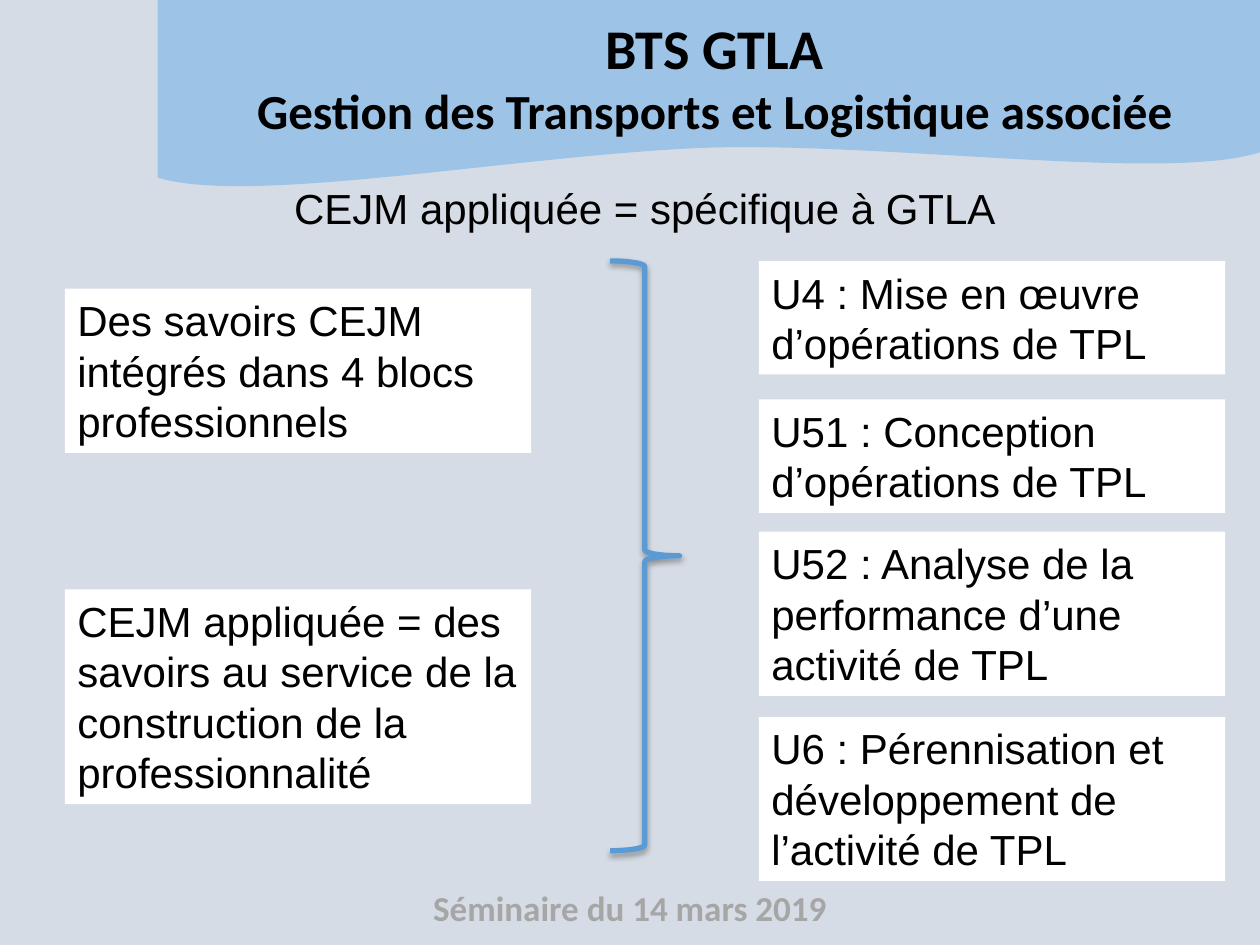
from lxml.etree import fromstring
from pptx import Presentation
from pptx.dml.color import RGBColor
from pptx.enum.shapes import MSO_SHAPE
from pptx.enum.text import MSO_ANCHOR, MSO_AUTO_SIZE, PP_ALIGN
from pptx.util import Cm, Pt

SHADOW = """<a:effectLst xmlns:a="http://schemas.openxmlformats.org/drawingml/2006/main">
<a:outerShdw blurRad="40000" dist="23000" dir="5400000" rotWithShape="0">
<a:srgbClr val="000000"><a:alpha val="35000"/></a:srgbClr>
</a:outerShdw></a:effectLst>"""


def paint(target, color):
    target.solid()
    target.fore_color.rgb = RGBColor.from_string(color)


def place(shape, box):
    shape.left, shape.top, shape.width, shape.height = map(Cm, box)


def write(shape, text, sizes, font="Arial", color="000000", bold=False,
          align=PP_ALIGN.LEFT, pitch=None):
    frame = shape.text_frame
    frame.text = text
    frame.word_wrap = True
    frame.auto_size = MSO_AUTO_SIZE.SHAPE_TO_FIT_TEXT
    frame.vertical_anchor = MSO_ANCHOR.TOP
    for para, size in zip(frame.paragraphs, sizes):
        para.alignment = align
        if pitch:
            para.line_spacing = Pt(pitch)
        for run in para.runs:
            run.font.name = font
            run.font.size = Pt(size)
            run.font.bold = bold
            paint(run.font.fill, color)


def label(slide, box, text, sizes, color="000000"):
    shape = slide.shapes.add_textbox(*map(Cm, box))
    write(shape, text, sizes, "Calibri", color, True, PP_ALIGN.CENTER)


def curve(start, first, second, end, steps=30):
    for i in range(1, steps + 1):
        t = i / steps
        u = 1 - t
        yield tuple(u**3 * a + 3 * u * u * t * b + 3 * u * t * t * c + t**3 * d
                    for a, b, c, d in zip(start, first, second, end))


def banner(slide, box):
    left, top, width, height = box
    right, mid, end = (width, 3.07), (11.3, 2.97), (0, 3.58)
    points = [(width, 0), right,
              *curve(right, (20.42, 3.66), (15.01, 2.9), mid),
              *curve(mid, (7.59, 3.07), (1.87, height), end)]
    pen = slide.shapes.build_freeform(Cm(left), Cm(top))
    pen.add_line_segments([(Cm(left + x), Cm(top + y)) for x, y in points])
    wave = pen.convert_to_shape()
    wave.shadow.inherit = False
    paint(wave.fill, "9DC3E6")
    wave.line.fill.background()
    label(slide, (left + 1.6, top + 0.15, 19.25, 2.82),
          "BTS GTLA\nGestion des Transports et Logistique associée", (32, 28))


def heading(slide, box):
    title = slide.shapes.title
    place(title, box)
    write(title, "CEJM appliquée = spécifique à GTLA", [24],
          align=PP_ALIGN.CENTER, pitch=28.8)


def column(slide, box, cards):
    left, top, width = box
    for drop, lines, text in cards:
        height = 0.25 + 1.02 * lines
        card = slide.shapes.add_shape(
            MSO_SHAPE.RECTANGLE, *map(Cm, (left, top + drop, width, height)))
        card.shadow.inherit = False
        paint(card.fill, "FFFFFF")
        card.line.fill.background()
        write(card, text, [24], pitch=28.8)


def brace(slide, box):
    shape = slide.shapes.add_shape(MSO_SHAPE.RIGHT_BRACE, *map(Cm, box))
    shape.fill.background()
    paint(shape.line.fill, "5B9BD5")
    shape.line.width = Pt(3)
    shape._element.spPr.append(fromstring(SHADOW))


def main():
    deck = Presentation()
    deck.slide_width, deck.slide_height = Cm(25.4), Cm(19.05)
    slide = deck.slides.add_slide(deck.slide_layouts[5])
    paint(slide.background.fill, "D6DCE5")
    label(slide, (6.35, 17.75, 12.7, 1.12), "Séminaire du 14 mars 2019",
          [20], "A6A6A6")
    banner(slide, (3.18, 0, 22.22, 4.17))
    heading(slide, (1.9, 3.56, 22.2, 1.3))
    column(slide, (1.31, 5.82, 9.4), [
        (0, 3, "Des savoirs CEJM intégrés dans 4 blocs professionnels"),
        (6.06, 4, "CEJM appliquée = des savoirs au service de la "
                  "construction de la professionnalité")])
    column(slide, (15.3, 5.26, 9.4), [
        (0, 2, "U4 : Mise en œuvre d’opérations de TPL"),
        (2.79, 2, "U51 : Conception d’opérations de TPL"),
        (5.46, 3, "U52 : Analyse de la performance d’une activité de TPL"),
        (9.19, 3, "U6 : Pérennisation et développement de l’activité de TPL")])
    brace(slide, (12.3, 5.26, 1.4, 11.89))
    deck.save("out.pptx")


if __name__ == "__main__":
    main()
